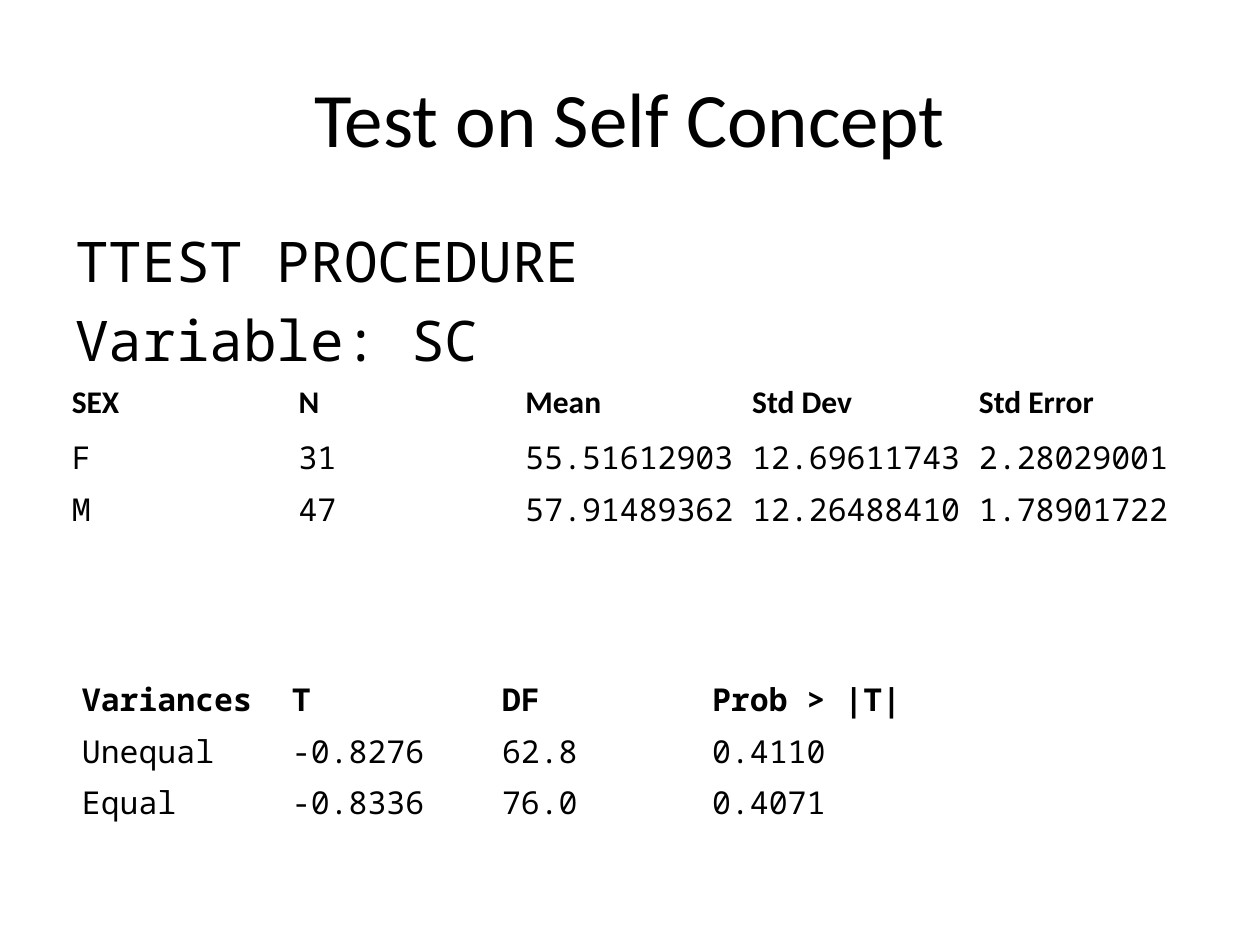
from lxml import etree
from pptx import Presentation
from pptx.dml.color import RGBColor
from pptx.enum.text import MSO_ANCHOR, PP_ALIGN
from pptx.oxml.ns import qn
from pptx.util import Inches, Pt

CENTER, LEFT = PP_ALIGN.CENTER, PP_ALIGN.LEFT
MIDDLE = MSO_ANCHOR.MIDDLE
SANS, MONO = "Calibri", "Noto Sans Mono"
BLACK, WHITE = "000000", "FFFFFF"
TITLE_ONLY = 5
ROW_HEIGHT = 0.41

GROUP_STATISTICS = [
    ["SEX", "N", "Mean", "Std Dev", "Std Error"],
    ["F", "31", "55.51612903", "12.69611743", "2.28029001"],
    ["M", "47", "57.91489362", "12.26488410", "1.78901722"],
]
T_TESTS = [
    ["Variances", "T", "DF", "Prob > |T|"],
    ["Unequal", "-0.8276", "62.8", "0.4110"],
    ["Equal", "-0.8336", "76.0", "0.4071"],
]


def rgb(color):
    return RGBColor.from_string(color)


def write(paragraph, text, size=18, font=MONO, color=BLACK, bold=False,
          align=LEFT, line_spacing=None):
    run = paragraph.add_run()
    run.text = text
    run.font.size = Pt(size)
    run.font.name = font
    run.font.bold = bold
    run.font.color.rgb = rgb(color)
    paragraph.alignment = align
    paragraph.line_spacing = line_spacing


def hang_paragraph(paragraph, indent, space_percent):
    properties = paragraph._p.get_or_add_pPr()
    properties.set("marL", str(Inches(indent)))
    properties.set("indent", str(-Inches(indent)))
    space_before = etree.SubElement(properties, qn("a:spcBef"))
    etree.SubElement(space_before, qn("a:spcPct"), val=str(space_percent * 1000))


def set_borders(cell, color, bottom_width):
    properties = cell._tc.get_or_add_tcPr()
    widths = {"a:lnL": 1, "a:lnR": 1, "a:lnT": 1, "a:lnB": bottom_width}
    for position, (tag, width) in enumerate(widths.items()):
        border = etree.Element(qn(tag), w=str(Pt(width)))
        fill = etree.SubElement(border, qn("a:solidFill"))
        etree.SubElement(fill, qn("a:srgbClr"), val=color)
        properties.insert(position, border)


def place_title(slide, left, top, width, height):
    title = slide.shapes.title
    title.left, title.top = Inches(left), Inches(top)
    title.width, title.height = Inches(width), Inches(height)
    title.text_frame.vertical_anchor = MIDDLE
    write(title.text_frame.paragraphs[0], "Test on Self Concept",
          size=44, font=SANS, align=CENTER)


def place_procedure(slide, left, top, width, height):
    procedure = slide.shapes.add_textbox(
        Inches(left), Inches(top), Inches(width), Inches(height)).text_frame
    procedure.word_wrap = True
    for index, line in enumerate(["TTEST PROCEDURE", "Variable: SC"]):
        paragraph = procedure.add_paragraph() if index else procedure.paragraphs[0]
        write(paragraph, line, size=32)
        hang_paragraph(paragraph, 0.38, 20)


def place_results(slide, rows, left, top, width, header_font):
    table = slide.shapes.add_table(
        len(rows), len(rows[0]), Inches(left), Inches(top),
        Inches(width), Inches(ROW_HEIGHT * len(rows))).table
    for row_index, values in enumerate(rows):
        header = row_index == 0
        table.rows[row_index].height = Inches(ROW_HEIGHT)
        for column_index, value in enumerate(values):
            cell = table.cell(row_index, column_index)
            cell.margin_left = cell.margin_right = Inches(0.07)
            cell.margin_top = cell.margin_bottom = 0
            cell.fill.solid()
            cell.fill.fore_color.rgb = rgb(WHITE)
            set_borders(cell, WHITE, 3 if header else 1)
            write(cell.text_frame.paragraphs[0], value, bold=header,
                  font=header_font if header else MONO, line_spacing=1.15)


def main():
    presentation = Presentation()
    presentation.slide_width, presentation.slide_height = Inches(10), Inches(7.5)
    slide = presentation.slides.add_slide(presentation.slide_layouts[TITLE_ONLY])
    slide.background.fill.solid()
    slide.background.fill.fore_color.rgb = rgb(WHITE)
    place_title(slide, 0.5, 0.3, 9, 1.25)
    place_procedure(slide, 0.5, 1.75, 9, 4.95)
    place_results(slide, GROUP_STATISTICS, 0.5, 3, 9, SANS)
    place_results(slide, T_TESTS, 0.58, 5.33, 6.67, MONO)
    presentation.save("out.pptx")


if __name__ == "__main__":
    main()
